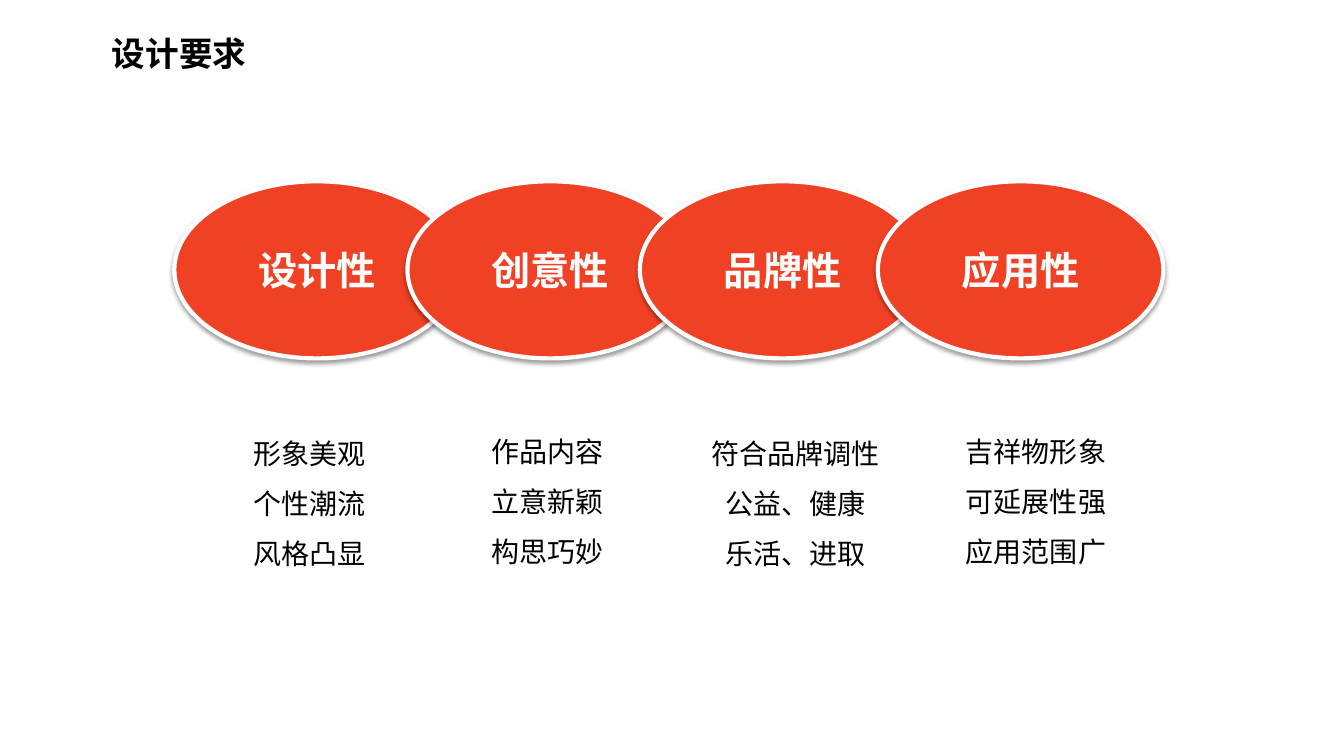
from lxml import etree
from pptx import Presentation
from pptx.dml.color import RGBColor
from pptx.enum.shapes import MSO_SHAPE
from pptx.enum.text import MSO_ANCHOR, MSO_AUTO_SIZE, PP_ALIGN
from pptx.oxml import parse_xml
from pptx.oxml.ns import nsdecls, qn
from pptx.util import Pt

TITLE = "设计要求"
REQUIREMENTS = [
    {"name": "设计性", "left": 124.5, "center": 221, "top": 296,
     "points": ["形象美观", "个性潮流", "风格凸显"]},
    {"name": "创意性", "left": 291, "center": 391, "top": 294.5,
     "points": ["作品内容", "立意新颖", "构思巧妙"]},
    {"name": "品牌性", "left": 457, "center": 568, "top": 296,
     "points": ["符合品牌调性", "公益、健康", "乐活、进取"]},
    {"name": "应用性", "left": 627, "center": 740, "top": 294.5,
     "points": ["吉祥物形象", "可延展性强", "应用范围广"]},
]

RED = RGBColor(0xF1, 0x41, 0x24)
WHITE = RGBColor(0xFF, 0xFF, 0xFF)
BLACK = RGBColor(0x00, 0x00, 0x00)
CJK_FONT = "Noto Sans CJK SC"
LATIN_FONT = "Arial"

OVAL_TOP, OVAL_WIDTH, OVAL_HEIGHT = 129.5, 204, 126.5
POINT_SIZE, POINTS_HEIGHT, SIDE_INSETS = 20, 116.5, 14.4

SHADOW = (
    f'<a:effectLst {nsdecls("a")}>'
    f'<a:outerShdw blurRad="{Pt(3.1)}" dist="{Pt(1.6)}" dir="5400000" rotWithShape="0">'
    '<a:srgbClr val="000000"><a:alpha val="38000"/></a:srgbClr>'
    '</a:outerShdw></a:effectLst>'
)


def add_text(paragraph, text, size, color, latin, bold, align):
    paragraph.alignment = align
    run = paragraph.add_run()
    run.text = text
    run.font.size = Pt(size)
    run.font.bold = bold
    run.font.color.rgb = color
    run.font.name = latin
    east_asian = etree.SubElement(run.font._element, qn("a:ea"))
    east_asian.set("typeface", CJK_FONT)


def add_oval(slide, name, left):
    oval = slide.shapes.add_shape(
        MSO_SHAPE.OVAL, Pt(left), Pt(OVAL_TOP), Pt(OVAL_WIDTH), Pt(OVAL_HEIGHT))
    oval.fill.solid()
    oval.fill.fore_color.rgb = RED
    oval.line.color.rgb = WHITE
    oval.line.width = Pt(3)
    oval._element.spPr.append(parse_xml(SHADOW))
    oval.text_frame.vertical_anchor = MSO_ANCHOR.MIDDLE
    add_text(oval.text_frame.paragraphs[0], name, 28, WHITE, LATIN_FONT, True, PP_ALIGN.CENTER)


def add_points(slide, points, center, top):
    width = max(map(len, points)) * POINT_SIZE + SIDE_INSETS
    box = slide.shapes.add_textbox(
        Pt(center - width / 2), Pt(top), Pt(width), Pt(POINTS_HEIGHT))
    frame = box.text_frame
    frame.word_wrap = False
    frame.auto_size = MSO_AUTO_SIZE.SHAPE_TO_FIT_TEXT
    for index, point in enumerate(points):
        paragraph = frame.add_paragraph() if index else frame.paragraphs[0]
        paragraph.line_spacing = 1.5
        add_text(paragraph, point, POINT_SIZE, BLACK, CJK_FONT, False, PP_ALIGN.CENTER)


def main():
    presentation = Presentation()
    presentation.slide_width, presentation.slide_height = Pt(960), Pt(540)
    slide = presentation.slides.add_slide(presentation.slide_layouts[5])

    title = slide.shapes.title
    title.left, title.top, title.width, title.height = Pt(72.7), Pt(20), Pt(283), Pt(36)
    title.text_frame.vertical_anchor = MSO_ANCHOR.TOP
    title.text_frame.auto_size = MSO_AUTO_SIZE.SHAPE_TO_FIT_TEXT
    add_text(title.text_frame.paragraphs[0], TITLE, 24, BLACK, CJK_FONT, True, PP_ALIGN.LEFT)

    for requirement in REQUIREMENTS:
        add_points(slide, requirement["points"], requirement["center"], requirement["top"])
        add_oval(slide, requirement["name"], requirement["left"])

    presentation.save("out.pptx")


if __name__ == "__main__":
    main()
